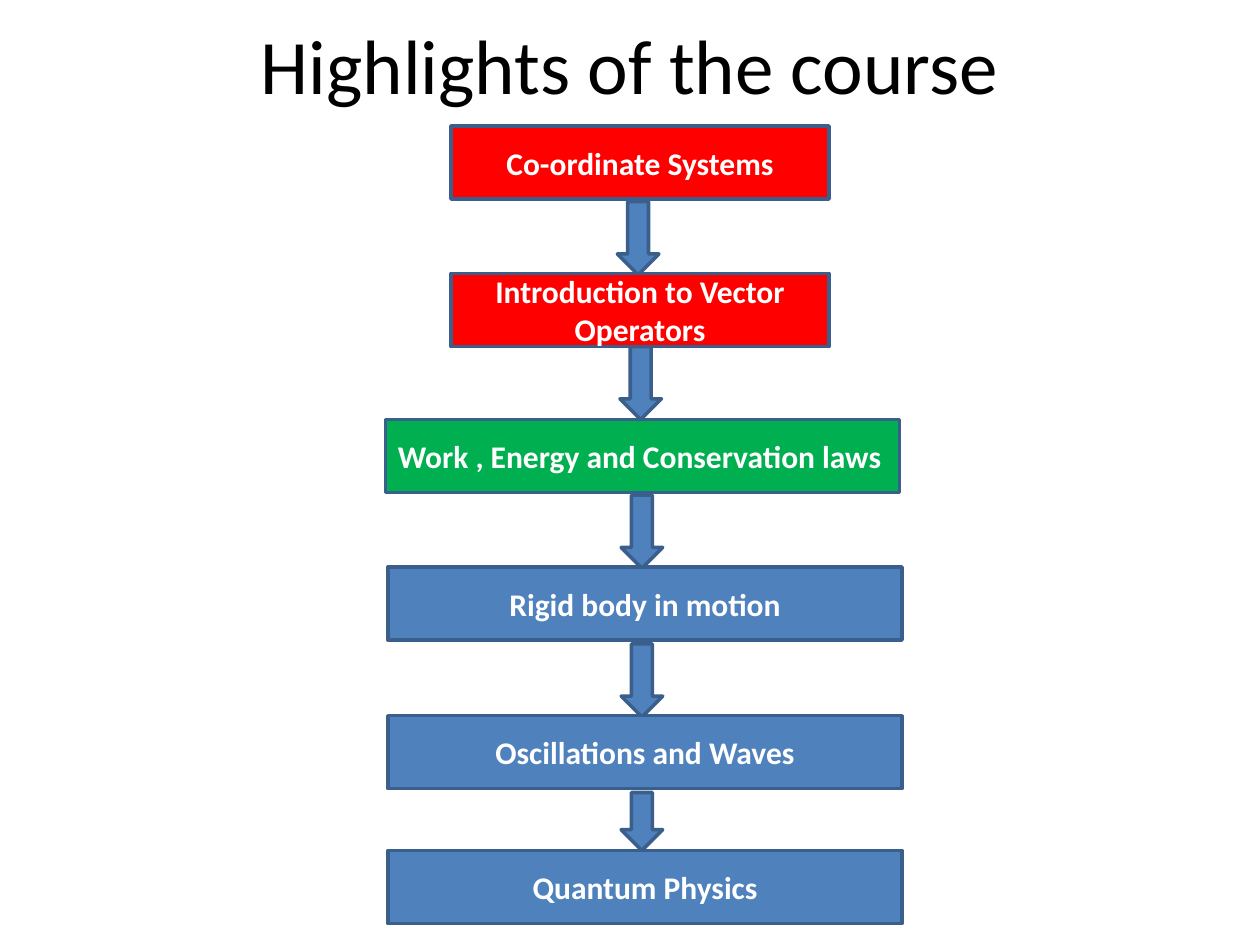
from dataclasses import dataclass

from pptx import Presentation
from pptx.dml.color import RGBColor
from pptx.enum import shapes, text
from pptx.util import Inches, Pt

FONT = "Calibri"
RED, GREEN, BLUE = "FF0000", "00B050", "4F81BD"
OUTLINE, WHITE, BLACK = "3A5F8C", "FFFFFF", "000000"
BOX_HEIGHT = 0.58
ARROW_WIDTH = 0.33


@dataclass
class Topic:
    label: str
    left: float
    top: float
    width: float
    fill: str
    align: text.PP_ALIGN = text.PP_ALIGN.CENTER


@dataclass
class Arrow:
    left: float
    top: float
    height: float = BOX_HEIGHT


TOPICS = [
    Topic("Co-ordinate Systems", 3.58, 1, 3, RED),
    Topic("Introduction to Vector Operators", 3.58, 2.17, 3, RED),
    Topic("Work , Energy and Conservation laws", 3.06, 3.33, 4.08, GREEN, text.PP_ALIGN.LEFT),
    Topic("Rigid body in motion", 3.08, 4.5, 4.08, BLUE),
    Topic("Oscillations and Waves", 3.08, 5.68, 4.08, BLUE),
    Topic("Quantum Physics", 3.08, 6.75, 4.08, BLUE),
]
ARROWS = [
    Arrow(4.9, 1.6),
    Arrow(4.92, 2.75),
    Arrow(4.93, 3.93),
    Arrow(4.93, 5.11),
    Arrow(4.93, 6.29, 0.46),
]


def color(value: str) -> RGBColor:
    return RGBColor.from_string(value)


def write(shape, label: str, size: int, ink: str, bold: bool, align: text.PP_ALIGN) -> None:
    frame = shape.text_frame
    frame.text = label
    frame.word_wrap = True
    frame.vertical_anchor = text.MSO_ANCHOR.MIDDLE
    paragraph = frame.paragraphs[0]
    paragraph.alignment = align
    font = paragraph.runs[0].font
    font.name, font.size, font.bold = FONT, Pt(size), bold
    font.color.rgb = color(ink)


def add_outlined(slide, kind, left: float, top: float, width: float, height: float, fill: str):
    shape = slide.shapes.add_shape(kind, Inches(left), Inches(top), Inches(width), Inches(height))
    shape.shadow.inherit = False
    shape.fill.solid()
    shape.fill.fore_color.rgb = color(fill)
    shape.line.color.rgb = color(OUTLINE)
    shape.line.width = Pt(2)
    return shape


def add_topic(slide, topic: Topic) -> None:
    box = add_outlined(slide, shapes.MSO_SHAPE.RECTANGLE, topic.left, topic.top,
                       topic.width, BOX_HEIGHT, topic.fill)
    write(box, topic.label, 18, WHITE, True, topic.align)


def add_arrow(slide, arrow: Arrow) -> None:
    add_outlined(slide, shapes.MSO_SHAPE.DOWN_ARROW, arrow.left, arrow.top,
                 ARROW_WIDTH, arrow.height, BLUE)


def main() -> None:
    presentation = Presentation()
    presentation.slide_width, presentation.slide_height = Inches(10), Inches(7.5)
    slide = presentation.slides.add_slide(presentation.slide_layouts[6])

    title = slide.shapes.add_textbox(Inches(0.5), Inches(0.01), Inches(9), Inches(1))
    write(title, "Highlights of the course", 44, BLACK, False, text.PP_ALIGN.CENTER)

    for arrow in ARROWS:
        add_arrow(slide, arrow)
    for topic in TOPICS:
        add_topic(slide, topic)

    presentation.save("out.pptx")


if __name__ == "__main__":
    main()
